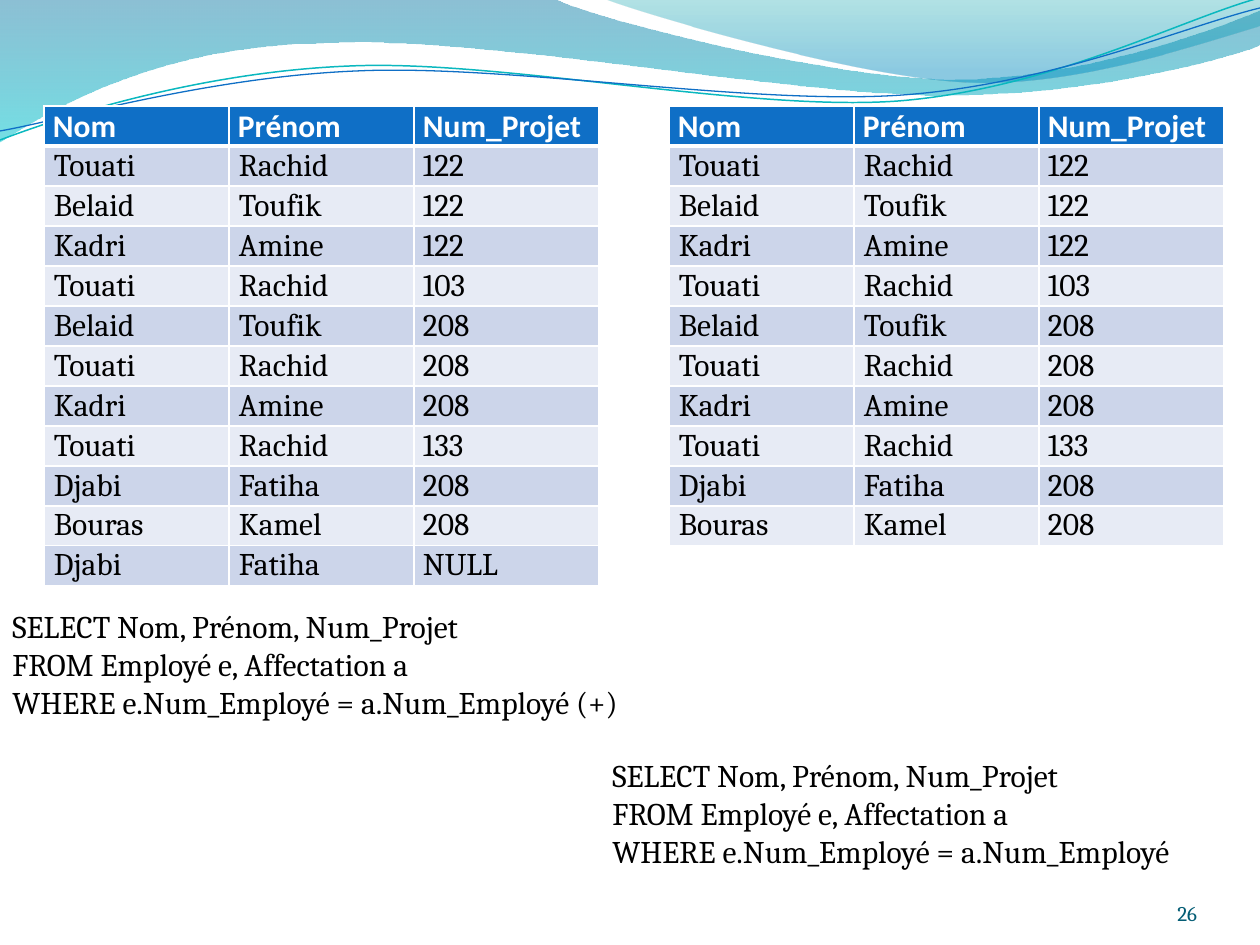
import dataclasses

import lxml.etree
import pptx
import pptx.dml.color
import pptx.enum.text
import pptx.oxml
import pptx.oxml.ns
import pptx.util

PX = 914400 / 126
ANCHOR = pptx.enum.text.MSO_ANCHOR
ALIGN = pptx.enum.text.PP_ALIGN
qn = pptx.oxml.ns.qn


@dataclasses.dataclass(frozen=True)
class Theme:
    """Colours, fonts and type sizes of the slide."""
    header: str = "0F6FC6"
    odd_row: str = "CCD5EA"
    even_row: str = "E7EBF5"
    white: str = "FFFFFF"
    ink: str = "000000"
    page_number: str = "045D75"
    teal_line: str = "0AB8BF"
    heading_font: str = "Calibri"
    body_font: str = "Cambria"
    text_size: int = 18
    page_size: int = 12


THEME = Theme()

HEADINGS = ("Nom", "Prénom", "Num_Projet")
ASSIGNED = [
    ("Touati", "Rachid", "122"),
    ("Belaid", "Toufik", "122"),
    ("Kadri", "Amine", "122"),
    ("Touati", "Rachid", "103"),
    ("Belaid", "Toufik", "208"),
    ("Touati", "Rachid", "208"),
    ("Kadri", "Amine", "208"),
    ("Touati", "Rachid", "133"),
    ("Djabi", "Fatiha", "208"),
    ("Bouras", "Kamel", "208"),
]
UNASSIGNED = [("Djabi", "Fatiha", "NULL")]
JOIN = ("SELECT Nom, Prénom, Num_Projet\n"
        "FROM Employé e, Affectation a\n"
        "WHERE e.Num_Employé = a.Num_Employé")

BROAD_WAVE = [
    ("M", (0, 0)), ("L", (554, -1)),
    ("C", (600, 21), (837, 79), (955, 79)),
    ("C", (1075, 79), (1207, 33), (1260, 11)), ("L", (1261, 45)),
    ("C", (1239, 55), (1096, 96), (940, 95)),
    ("C", (784, 95), (481, 35), (324, 43)),
    ("C", (163, 45), (58, 105), (-1, 142)),
]
RIGHT_WAVE = [
    ("M", (604, -1)),
    ("C", (641, 14), (859, 78), (969, 82)),
    ("C", (1077, 87), (1211, 40), (1260, 26)), ("L", (1260, 0)),
]
TEAL_CURVE = [
    ("M", (0, 140)),
    ("C", (60, 117), (199, 72), (349, 66)),
    ("C", (498, 59), (747, 112), (898, 101)),
    ("C", (1050, 89), (1182, 19), (1259, -2)),
]
BLUE_CURVE = [
    ("M", (0, 131)),
    ("C", (59, 121), (207, 77), (357, 71)),
    ("C", (508, 64), (752, 106), (903, 95)),
    ("C", (1053, 84), (1186, 26), (1260, 8)),
]


def emu(px):
    """Turn px into EMU."""
    return pptx.util.Emu(round(px * PX))


def rgb(value):
    """Turn a hex string into a colour."""
    return pptx.dml.color.RGBColor.from_string(value)


def write(frame, text, *, size=THEME.text_size, font=THEME.body_font, color=THEME.ink,
          bold=False, align=ALIGN.LEFT, spacing=None, indent=0):
    """Fill a text frame with one paragraph for each line of text."""
    frame.text = text
    for paragraph in frame.paragraphs:
        paragraph.alignment = align
        paragraph.line_spacing = spacing
        if indent:
            paragraph._p.get_or_add_pPr().set("marL", str(emu(indent)))
        style = paragraph.runs[0].font
        style.size, style.name, style.bold = pptx.util.Pt(size), font, bold
        style.color.rgb = rgb(color)


def add_curve(slide, box, segments, closed):
    """Draw an outline of lines and cubic curves from the corner of the box."""
    left, top = box[:2]
    points = [(emu(left + x), emu(top + y)) for _, *group in segments for x, y in group]
    builder = slide.shapes.build_freeform(*points[0], scale=1.0)
    builder.add_line_segments(points[1:], close=closed)
    outline = builder.convert_to_shape()
    outline.shadow.inherit = False
    steps = iter(outline._element.findall(".//" + qn("a:lnTo")))
    for kind, *group in segments[1:]:
        corners = [next(steps) for _ in group]
        if kind == "C":
            bezier = lxml.etree.Element(qn("a:cubicBezTo"))
            corners[0].addprevious(bezier)
            for corner in corners:
                bezier.append(corner[0])
                corner.getparent().remove(corner)
    return outline


def add_wave(slide, box, segments, stops):
    """Draw a wave with a translucent vertical gradient."""
    wave = add_curve(slide, box, segments, True)
    wave.line.fill.background()
    wave.fill.gradient()
    wave.fill.gradient_angle = 270
    for stop, (position, color, opacity) in zip(wave.fill.gradient_stops, stops):
        stop.position = position
        stop.color.rgb = rgb(color)
        tint = stop._gs.find(qn("a:srgbClr"))
        lxml.etree.SubElement(tint, qn("a:alpha"), val=str(opacity * 1000))


def add_banner(slide, box):
    """Draw the waves and thin curves along the top of the slide."""
    add_wave(slide, box, BROAD_WAVE, [(0, "0074A1", 45), (1, "00C6CF", 55)])
    add_wave(slide, box, RIGHT_WAVE, [(0, "00A1A9", 30), (0.8, "008BBF", 45)])
    for segments, color, width in ((TEAL_CURVE, THEME.teal_line, 0.85),
                                   (BLUE_CURVE, THEME.header, 0.75)):
        curve = add_curve(slide, box, segments, False)
        curve.fill.background()
        curve.line.color.rgb = rgb(color)
        curve.line.width = pptx.util.Pt(width)


def set_borders(cell, bottom):
    """Give a cell white borders with the given bottom width in points."""
    properties = cell._tc.get_or_add_tcPr()
    for index, (side, width) in enumerate((("L", 1), ("R", 1), ("T", 1), ("B", bottom))):
        border = lxml.etree.Element(qn("a:ln" + side), w=str(pptx.util.Pt(width)))
        fill = lxml.etree.SubElement(border, qn("a:solidFill"))
        lxml.etree.SubElement(fill, qn("a:srgbClr"), val=THEME.white)
        properties.insert(index, border)


def add_result(slide, box, records, short_rows):
    """Draw a query result whose last rows are a little shorter."""
    rows = [HEADINGS, *records]
    table = slide.shapes.add_table(len(rows), len(HEADINGS), *map(emu, box)).table
    for column in table.columns:
        column.width = emu(box[2] / len(HEADINGS))
    for r, values in enumerate(rows):
        table.rows[r].height = emu(38 if r >= len(rows) - short_rows else 40)
        for c, value in enumerate(values):
            cell = table.cell(r, c)
            cell.margin_left = cell.margin_right = emu(9)
            cell.margin_top = cell.margin_bottom = 0
            cell.fill.solid()
            if r == 0:
                color = THEME.header
                write(cell.text_frame, value, font=THEME.heading_font, color=THEME.white,
                      bold=True, spacing=1.05)
            else:
                color = THEME.odd_row if r % 2 else THEME.even_row
                write(cell.text_frame, value, spacing=1.05, indent=1 if c < 2 else 0)
            cell.fill.fore_color.rgb = rgb(color)
            set_borders(cell, 3 if r == 0 else 1)


def add_query(slide, box, query):
    """Place an SQL query."""
    frame = slide.shapes.add_textbox(*map(emu, box)).text_frame
    frame.word_wrap = True
    frame.auto_size = pptx.enum.text.MSO_AUTO_SIZE.SHAPE_TO_FIT_TEXT
    write(frame, query)


def add_page_number(slide, box, number):
    """Place the page number at the bottom right of its box."""
    frame = slide.shapes.add_textbox(*map(emu, box)).text_frame
    frame.word_wrap = True
    frame.vertical_anchor = ANCHOR.BOTTOM
    frame.margin_left = frame.margin_right = frame.margin_top = frame.margin_bottom = 0
    write(frame, number, size=THEME.page_size, color=THEME.page_number, align=ALIGN.RIGHT)


def main():
    """Build the slide and save it."""
    deck = pptx.Presentation()
    deck.slide_width, deck.slide_height = emu(1260), emu(945)
    slide = deck.slides.add_slide(deck.slide_layouts[6])
    add_banner(slide, (0, 0, 1260, 142))
    add_page_number(slide, (1092, 876, 105, 50), "26")
    add_result(slide, (44, 106, 555, 476), ASSIGNED + UNASSIGNED, 2)
    add_result(slide, (669, 106, 555, 438), ASSIGNED, 1)
    add_query(slide, (0, 601, 689, 165), JOIN + " (+)")
    add_query(slide, (600, 750, 660, 165), JOIN)
    deck.save("out.pptx")


if __name__ == "__main__":
    main()
